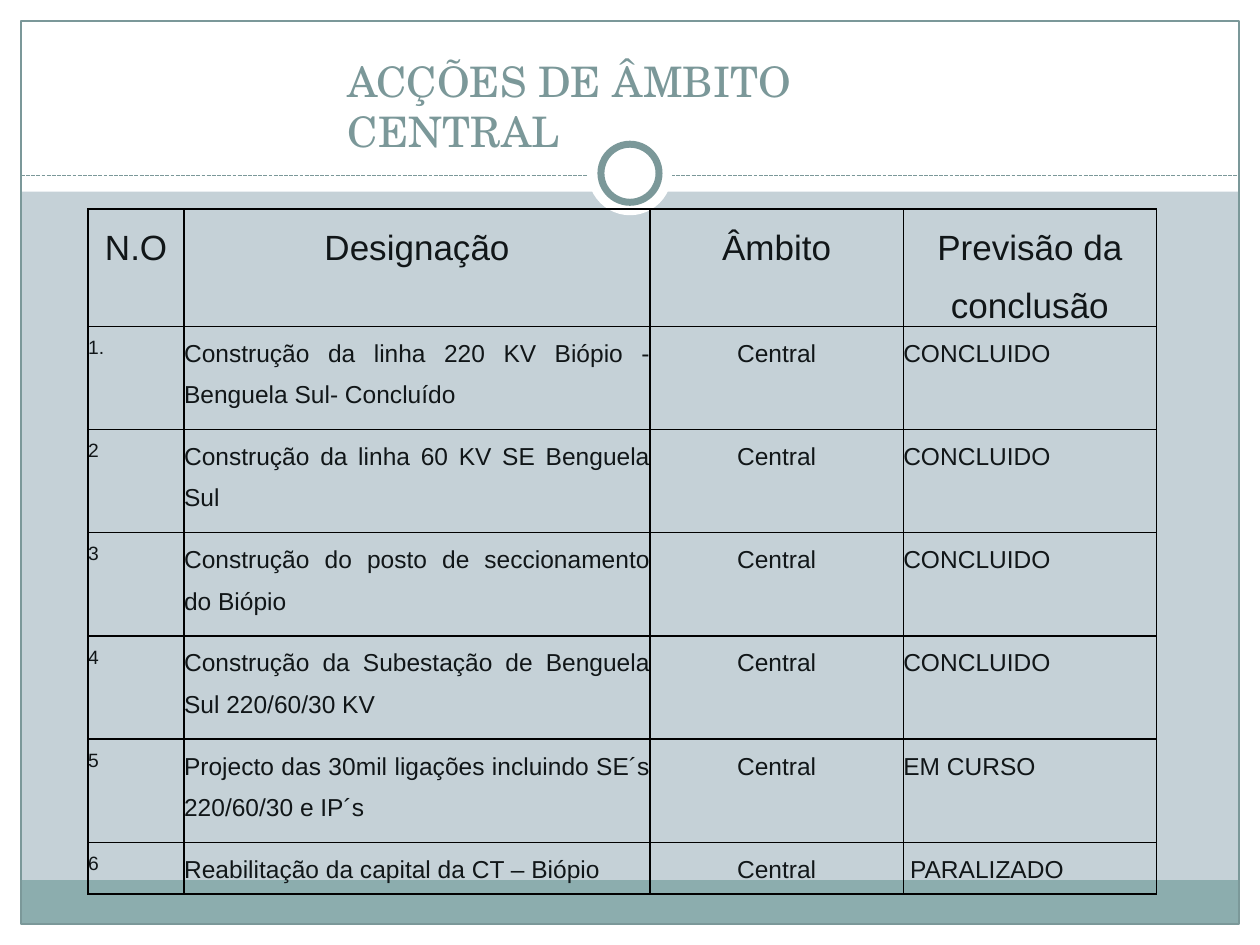
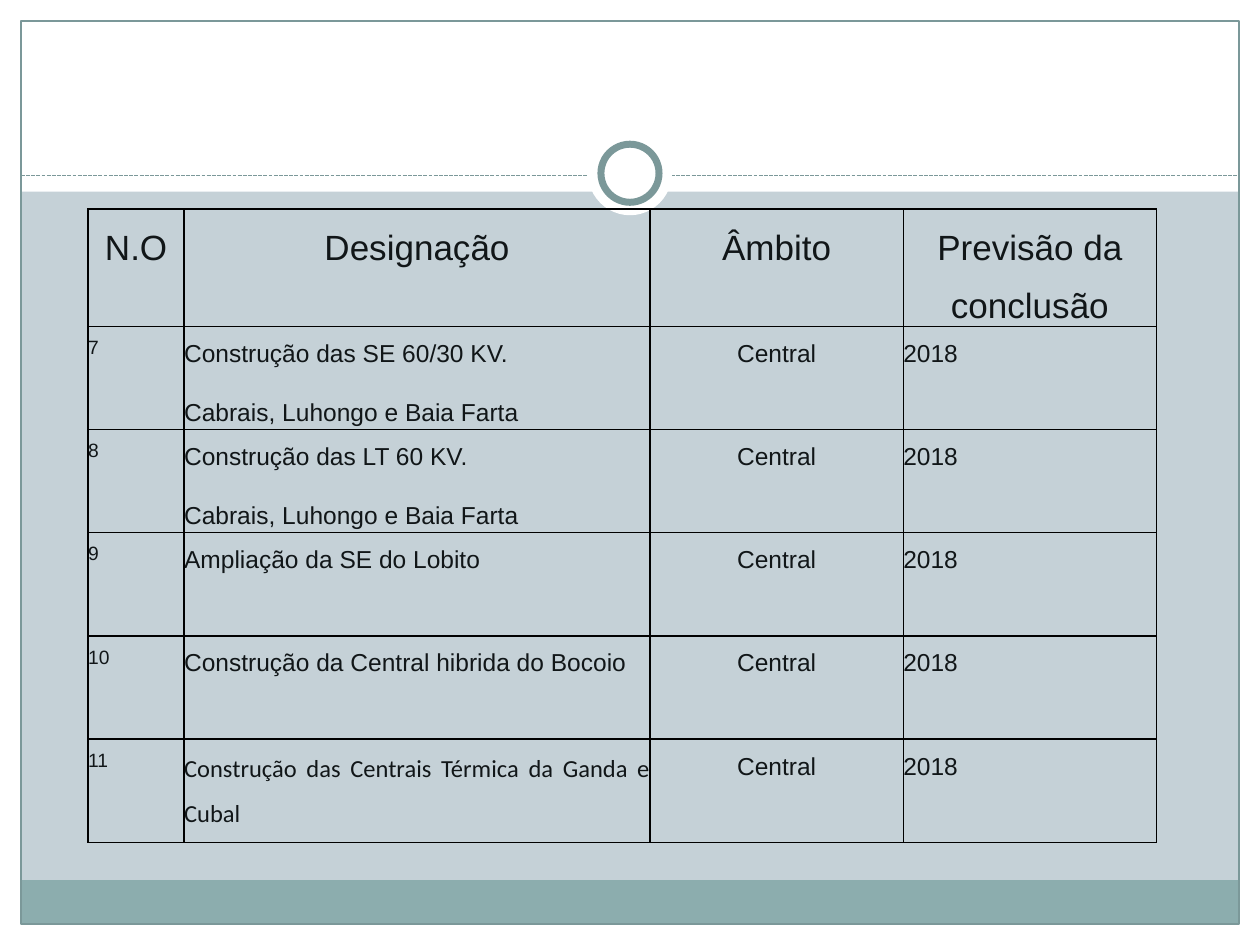
from lxml.etree import SubElement
from pptx import Presentation
from pptx.dml.color import RGBColor
from pptx.enum.dml import MSO_LINE
from pptx.enum.shapes import MSO_CONNECTOR, MSO_SHAPE
from pptx.enum.text import MSO_ANCHOR, MSO_AUTO_SIZE, PP_ALIGN
from pptx.oxml import parse_xml
from pptx.oxml.ns import nsdecls, qn
from pptx.util import Pt

TITLE_ONLY, BLANK = 5, 6
WHITE, TEAL, FOOTER, PAGE, INK, BORDER = (
    "FFFFFF", "7B9899", "8CADAE", "C5D1D7", "111618", "000000")
WIDTH, HEIGHT, MARGIN = 720, 540, 12
RING_CENTRE = (360, 99)

COLUMN_WIDTHS = [54.8, 266.3, 144.7, 144.7]
HEADER_HEIGHT, ROW_HEIGHT = 59, 59
HEADINGS = ["N.O", "Designação", "Âmbito", "Previsão da conclusão"]
SCOPE = "Central"
BODY_SIZES = [11, 14, 14, 14]
BODY_ALIGNMENTS = [PP_ALIGN.JUSTIFY, PP_ALIGN.JUSTIFY, PP_ALIGN.CENTER, PP_ALIGN.JUSTIFY]

FIRST_ACTIONS = [
    ("1.", "Construção da linha 220 KV Biópio - Benguela Sul- Concluído", "CONCLUIDO"),
    ("2", "Construção da linha 60 KV SE Benguela Sul", "CONCLUIDO"),
    ("3", "Construção do posto de seccionamento do Biópio", "CONCLUIDO"),
    ("4", "Construção da Subestação de Benguela Sul 220/60/30 KV", "CONCLUIDO"),
    ("5", "Projecto das 30mil ligações incluindo SE´s 220/60/30 e IP´s", "EM CURSO"),
    ("6", "Reabilitação da capital da CT – Biópio", "PARALIZADO"),
]
LATER_ACTIONS = [
    ("7", "Construção das SE 60/30 KV.\nCabrais, Luhongo e Baia Farta", "2018"),
    ("8", "Construção das LT 60 KV.\nCabrais, Luhongo e Baia Farta", "2018"),
    ("9", "Ampliação da SE do Lobito", "2018"),
    ("10", "Construção da Central hibrida do Bocoio", "2018"),
    ("11", "Construção das Centrais Térmica da Ganda e Cubal", "2018"),
]


def color(hex_string):
    return RGBColor.from_string(hex_string)


def paint(fill, hex_string):
    if hex_string:
        fill.solid()
        fill.fore_color.rgb = color(hex_string)
    else:
        fill.background()


def add_preset(slide, preset, left, top, width, height, fill=None, outline=None, weight=0.75):
    preset_shape = slide.shapes.add_shape(preset, Pt(left), Pt(top), Pt(width), Pt(height))
    preset_shape.shadow.inherit = False
    paint(preset_shape.fill, fill)
    paint(preset_shape.line.fill, outline)
    if outline:
        preset_shape.line.width = Pt(weight)


def add_circle(slide, radius, **style):
    x, y = RING_CENTRE
    add_preset(slide, MSO_SHAPE.OVAL, x - radius, y - radius, 2 * radius, 2 * radius, **style)


def add_divider(slide, y):
    divider = slide.shapes.add_connector(
        MSO_CONNECTOR.STRAIGHT, Pt(MARGIN), Pt(y), Pt(WIDTH - MARGIN), Pt(y))
    divider.line.color.rgb = color(TEAL)
    divider.line.width = Pt(0.75)
    divider.line.dash_style = MSO_LINE.SQUARE_DOT
    SubElement(divider._element.spPr, qn("a:effectLst"))


def add_frame(slide):
    inner_width = WIDTH - 2 * MARGIN
    white_bands = [
        (0, HEIGHT - MARGIN, WIDTH, MARGIN),
        (0, 0, WIDTH, 109.5),
        (0, 0, MARGIN, HEIGHT),
        (WIDTH - MARGIN, 0, MARGIN, HEIGHT),
    ]
    for band in white_bands:
        add_preset(slide, MSO_SHAPE.RECTANGLE, *band, fill=WHITE)
    add_preset(slide, MSO_SHAPE.RECTANGLE, MARGIN, 503, inner_width, 25, fill=FOOTER)
    add_preset(slide, MSO_SHAPE.RECTANGLE, MARGIN, MARGIN, inner_width,
               HEIGHT - 2 * MARGIN, outline=TEAL)
    add_divider(slide, 100.5)
    add_circle(slide, 24, fill=WHITE)
    add_circle(slide, 16.6, fill=WHITE, outline=TEAL, weight=4)


def format_title(slide, text):
    title = slide.shapes.title
    slide.shapes._spTree.append(title._element)
    title.left, title.top, title.width, title.height = Pt(198.7), Pt(31.7), Pt(374.4), Pt(58)
    frame = title.text_frame
    frame.margin_left = frame.margin_right = frame.margin_top = frame.margin_bottom = 0
    frame.vertical_anchor = MSO_ANCHOR.TOP
    frame.word_wrap = True
    frame.auto_size = MSO_AUTO_SIZE.NONE
    frame.text = text
    heading = frame.paragraphs[0]
    heading.alignment = PP_ALIGN.LEFT
    heading.font.size = Pt(24)
    heading.font.name = "TeX Gyre Schola"
    heading.font.color.rgb = color(TEAL)


def add_borders(cell):
    properties = cell._tc.get_or_add_tcPr()
    for side in ("lnL", "lnR", "lnT", "lnB"):
        properties.append(parse_xml(
            f'<a:{side} {nsdecls("a")} w="12700"><a:solidFill>'
            f'<a:srgbClr val="{BORDER}"/></a:solidFill></a:{side}>'))


def fill_cell(cell, text, size, alignment, font_name="Arial"):
    cell.margin_left = cell.margin_right = cell.margin_top = cell.margin_bottom = 0
    add_borders(cell)
    cell.fill.background()
    cell.text_frame.text = text
    for index, paragraph in enumerate(cell.text_frame.paragraphs):
        paragraph.alignment = alignment
        paragraph.line_spacing = 1.5
        if index:
            paragraph.space_before = Pt(10)
        for run in paragraph.runs:
            run.font.size = Pt(size)
            run.font.name = font_name
            run.font.color.rgb = color(INK)


def add_actions_table(slide, actions):
    height = HEADER_HEIGHT + ROW_HEIGHT * len(actions)
    table = slide.shapes.add_table(
        len(actions) + 1, len(COLUMN_WIDTHS),
        Pt(50.4), Pt(119.5), Pt(sum(COLUMN_WIDTHS)), Pt(height)).table
    table.first_row = table.horz_banding = False
    for column, width in zip(table.columns, COLUMN_WIDTHS):
        column.width = Pt(width)
    for row in table.rows:
        row.height = Pt(ROW_HEIGHT)
    table.rows[0].height = Pt(HEADER_HEIGHT)
    for column, heading in enumerate(HEADINGS):
        fill_cell(table.cell(0, column), heading, 20, PP_ALIGN.CENTER)
    for row, (number, designation, forecast) in enumerate(actions, start=1):
        values = [number, designation, SCOPE, forecast]
        for column, value in enumerate(values):
            fill_cell(table.cell(row, column), value, BODY_SIZES[column], BODY_ALIGNMENTS[column])
    return table


def main():
    presentation = Presentation()
    presentation.slide_width, presentation.slide_height = Pt(WIDTH), Pt(HEIGHT)
    paint(presentation.slide_master.background.fill, PAGE)
    layouts = presentation.slide_layouts

    first_slide = presentation.slides.add_slide(layouts[TITLE_ONLY])
    add_frame(first_slide)
    first_table = add_actions_table(first_slide, FIRST_ACTIONS)
    last_row = len(FIRST_ACTIONS)
    first_table.rows[last_row].height = Pt(ROW_HEIGHT / 2)
    first_table.cell(last_row, 3).margin_left = Pt(3.9)
    format_title(first_slide, "ACÇÕES DE ÂMBITO CENTRAL")

    later_slide = presentation.slides.add_slide(layouts[BLANK])
    add_frame(later_slide)
    later_table = add_actions_table(later_slide, LATER_ACTIONS)
    thermal_plants = later_table.cell(len(LATER_ACTIONS), 1).text_frame.paragraphs[0]
    thermal_plants.runs[0].font.name = "Calibri"

    presentation.save("out.pptx")


if __name__ == "__main__":
    main()
